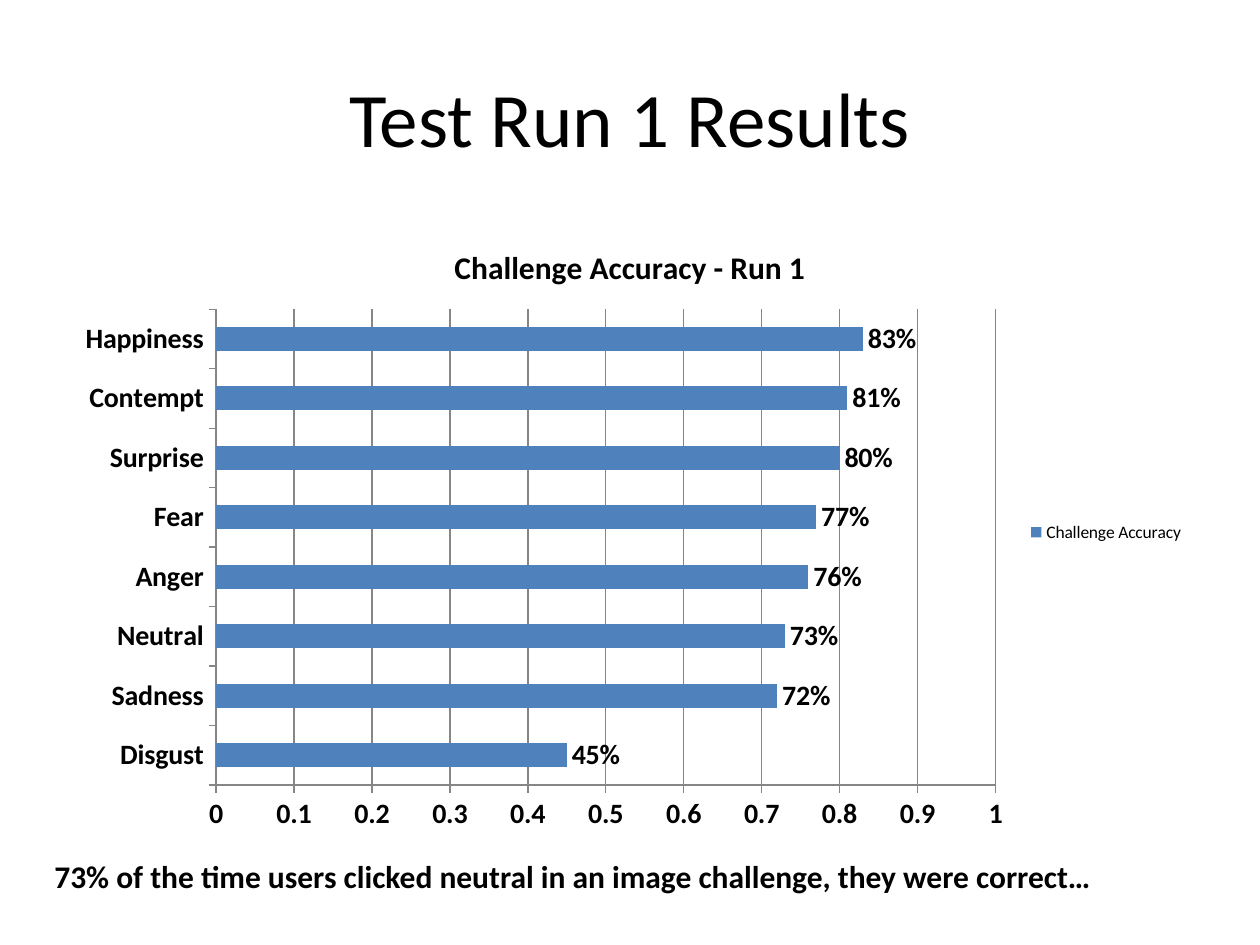
from dataclasses import dataclass

from pptx import Presentation
from pptx.chart.data import CategoryChartData
from pptx.dml.color import RGBColor
from pptx.enum.chart import XL_CHART_TYPE, XL_LABEL_POSITION, XL_LEGEND_POSITION, XL_TICK_MARK
from pptx.enum.text import MSO_ANCHOR, PP_ALIGN
from pptx.util import Pt


@dataclass(frozen=True)
class Theme:
    face: str = "Calibri"
    ink: RGBColor = RGBColor(0x00, 0x00, 0x00)
    bar: RGBColor = RGBColor(0x4F, 0x81, 0xBD)
    rule: RGBColor = RGBColor(0x86, 0x86, 0x86)
    title: int = 44
    heading: int = 18
    label: int = 16
    legend: int = 10


THEME = Theme()

ACCURACY = {
    "Disgust": 0.45,
    "Sadness": 0.72,
    "Neutral": 0.73,
    "Anger": 0.76,
    "Fear": 0.77,
    "Surprise": 0.80,
    "Contempt": 0.81,
    "Happiness": 0.83,
}


def set_font(font, size, bold=False):
    font.name = THEME.face
    font.size = Pt(size)
    font.bold = bold
    font.color.rgb = THEME.ink


def add_text(page, bounds, text, size, bold=False, align=PP_ALIGN.LEFT, anchor=MSO_ANCHOR.TOP):
    box = page.shapes.add_textbox(*map(Pt, bounds))
    frame = box.text_frame
    frame.word_wrap = True
    frame.vertical_anchor = anchor
    para = frame.paragraphs[0]
    para.text = text
    para.alignment = align
    set_font(para.font, size, bold)


def style_axis(axis):
    axis.major_tick_mark = XL_TICK_MARK.OUTSIDE
    axis.minor_tick_mark = XL_TICK_MARK.NONE
    axis.format.line.color.rgb = THEME.rule
    set_font(axis.tick_labels.font, THEME.label, bold=True)


def add_accuracy_chart(page, bounds):
    data = CategoryChartData(number_format="General")
    data.categories = list(ACCURACY)
    data.add_series("Challenge Accuracy", list(ACCURACY.values()))
    chart = page.shapes.add_chart(XL_CHART_TYPE.BAR_CLUSTERED, *map(Pt, bounds), data).chart
    set_font(chart.font, THEME.legend)

    # Heading and legend
    chart.has_title = True
    heading = chart.chart_title.text_frame.paragraphs[0]
    heading.text = "Challenge Accuracy - Run 1"
    set_font(heading.font, THEME.heading, bold=True)
    chart.has_legend = True
    chart.legend.position = XL_LEGEND_POSITION.RIGHT
    chart.legend.include_in_layout = False
    set_font(chart.legend.font, THEME.legend)

    # Axes
    style_axis(chart.category_axis)
    values = chart.value_axis
    style_axis(values)
    values.minimum_scale = 0
    values.maximum_scale = 1
    values.major_unit = 0.1
    values.has_major_gridlines = True
    values.major_gridlines.format.line.color.rgb = THEME.rule

    # Bars and their labels
    plot = chart.plots[0]
    plot.vary_by_categories = False
    plot.gap_width = 150
    bars = plot.series[0].format.fill
    bars.solid()
    bars.fore_color.rgb = THEME.bar
    plot.has_data_labels = True
    labels = plot.data_labels
    labels.show_value = True
    labels.number_format = "0%"
    labels.number_format_is_linked = False
    labels.position = XL_LABEL_POSITION.OUTSIDE_END
    set_font(labels.font, THEME.label, bold=True)


def main():
    deck = Presentation()
    deck.slide_width, deck.slide_height = Pt(720), Pt(540)
    page = deck.slides.add_slide(deck.slide_layouts[6])

    add_text(page, (36, 21.6, 648, 90), "Test Run 1 Results", THEME.title,
             align=PP_ALIGN.CENTER, anchor=MSO_ANCHOR.MIDDLE)
    add_accuracy_chart(page, (36, 126, 648, 356.4))
    add_text(page, (24, 486, 618, 29),
             "73% of the time users clicked neutral in an image challenge, they were correct…",
             THEME.heading, bold=True)

    deck.save("out.pptx")


if __name__ == "__main__":
    main()
